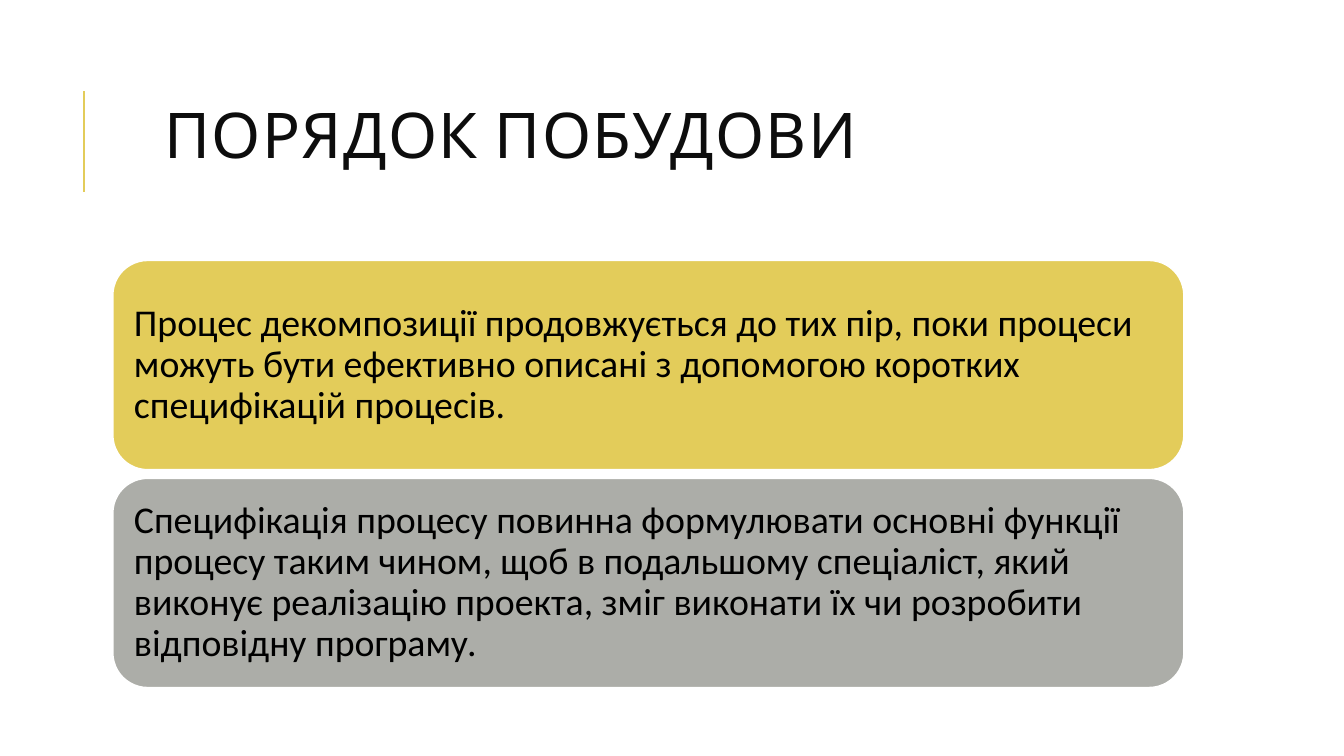
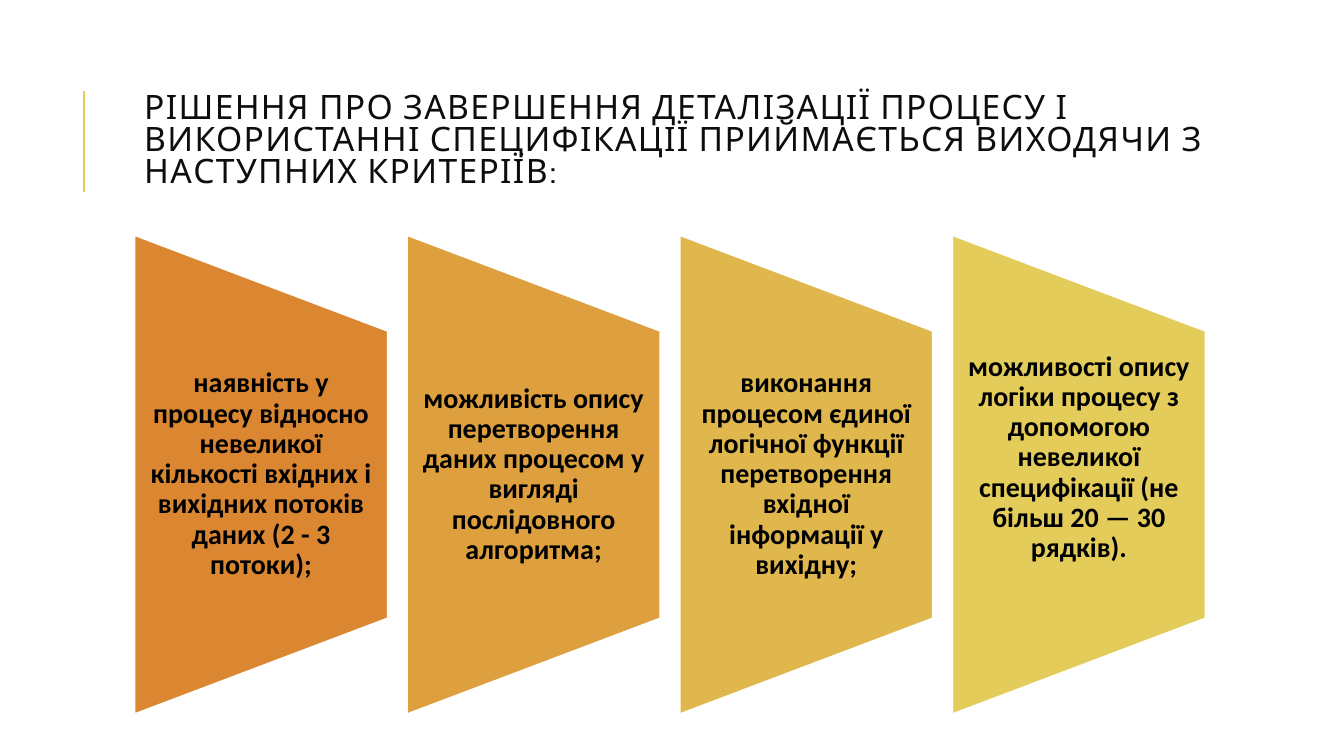
"""Build two slides on the order of process decomposition and its stopping criteria."""
from lxml.etree import SubElement
from pptx import Presentation
from pptx.dml.color import RGBColor
from pptx.enum.shapes import MSO_CONNECTOR, MSO_SHAPE
from pptx.enum.text import MSO_ANCHOR, MSO_AUTO_SIZE, PP_ALIGN
from pptx.oxml.ns import qn
from pptx.util import Cm, Pt

COLOURS = {
    "title": "0D0D0D", "text": "000000", "outline": "FFFFFF",
    "yellow": "E3CC5A", "grey": "ACADA8", "orange": "DB8631",
    "amber": "DEA03F", "gold": "E0B74C",
}
TITLE_FONT, BODY_FONT = "Cabin", "Calibri"

ORDER_TITLE = "ПОРЯДОК ПОБУДОВИ"
ORDER_STEPS = [
    ("yellow", "Процес декомпозиції продовжується до тих пір, поки процеси можуть бути "
               "ефективно описані з допомогою коротких специфікацій процесів."),
    ("grey", "Специфікація процесу повинна формулювати основні функції процесу таким чином, "
             "щоб в подальшому спеціаліст, який виконує реалізацію проекта, зміг виконати їх "
             "чи розробити відповідну програму."),
]

CRITERIA_TITLE = ("РІШЕННЯ ПРО ЗАВЕРШЕННЯ ДЕТАЛІЗАЦІЇ ПРОЦЕСУ І ВИКОРИСТАННІ СПЕЦИФІКАЦІЇ "
                  "ПРИЙМАЄТЬСЯ ВИХОДЯЧИ З НАСТУПНИХ КРИТЕРІЇВ:")
CRITERIA = [
    ("orange", 0, "наявність у процесу відносно невеликої кількості вхідних і вихідних "
                  "потоків даних (2 - 3 потоки);"),
    ("amber", 0, "можливість опису перетворення даних процесом у вигляді послідовного алгоритма;"),
    ("gold", 0, "виконання процесом єдиної логічної функції перетворення вхідної "
                "інформації у вихідну;"),
    ("yellow", 0.85, "можливості опису логіки процесу з допомогою невеликої специфікації "
                     "(не більш 20 — 30 рядків)."),
]


def colour(name):
    """Return the named palette colour."""
    return RGBColor.from_string(COLOURS[name])


def write_text(shape, text, font, size, colour_name, align, spacing, bold=False):
    """Put one formatted paragraph, vertically centred, in a shape."""
    frame = shape.text_frame
    frame.text = text
    frame.word_wrap = True
    frame.auto_size = MSO_AUTO_SIZE.NONE
    frame.vertical_anchor = MSO_ANCHOR.MIDDLE
    paragraph = frame.paragraphs[0]
    paragraph.alignment = align
    paragraph.line_spacing = spacing
    run = paragraph.runs[0]
    run.font.name = font
    run.font.size = Pt(size)
    run.font.bold = bold
    run.font.color.rgb = colour(colour_name)
    return run


def set_insets(frame, horizontal, top, bottom):
    """Set the text margins in centimetres."""
    frame.margin_left = frame.margin_right = Cm(horizontal)
    frame.margin_top, frame.margin_bottom = Cm(top), Cm(bottom)


def add_panel(slide, preset, left, top, width, height, fill):
    """Add a filled shape with the shared white outline."""
    shape = slide.shapes.add_shape(preset, Cm(left), Cm(top), Cm(width), Cm(height))
    shape.shadow.inherit = False
    shape.fill.solid()
    shape.fill.fore_color.rgb = colour(fill)
    shape.line.color.rgb = colour("outline")
    shape.line.width = Pt(1.25)
    return shape


def add_titled_slide(presentation, layout, title, size, left, top, width, height):
    """Add a slide and format its title placeholder."""
    slide = presentation.slides.add_slide(layout)
    shape = slide.shapes.title
    shape.left, shape.top, shape.width, shape.height = map(Cm, (left, top, width, height))
    run = write_text(shape, title, TITLE_FONT, size, "title", PP_ALIGN.LEFT, 0.8)
    run.font._element.set("spc", "100")
    return slide


def move_accent_to_layout(slide, layout):
    """Draw the vertical title accent and make it part of the layout."""
    accent = slide.shapes.add_connector(
        MSO_CONNECTOR.STRAIGHT, Cm(2.12), Cm(4.83), Cm(2.12), Cm(2.29))
    accent.line.color.rgb = colour("yellow")
    accent.line.width = Pt(1.5)
    SubElement(accent.element.spPr, qn("a:effectLst"))
    layout.shapes.element.append(accent.element)


def add_order_steps(slide):
    """Stack the steps as rounded panels."""
    left, top, width, height, gap = 2.84, 6.56, 27, 5.28, 0.21
    for index, (fill, text) in enumerate(ORDER_STEPS):
        panel = add_panel(slide, MSO_SHAPE.ROUNDED_RECTANGLE,
                          left, top + index * (height + gap), width, height, fill)
        set_insets(panel.text_frame, 0.28, 0.28, 0.28)
        write_text(panel, text, BODY_FONT, 27, "text", PP_ALIGN.LEFT, 0.9)


def add_criteria(slide):
    """Set the criteria side by side on turned trapezoids."""
    left, middle, width, height, gap = 3.39, 11.96, 6.38, 12.07, 0.49
    text_height = 7.24
    for index, (fill, bottom_inset, text) in enumerate(CRITERIA):
        column = left + index * (width + gap)
        panel = add_panel(slide, MSO_SHAPE.FLOWCHART_MANUAL_OPERATION,
                          column + (width - height) / 2, middle - width / 2,
                          height, width, fill)
        panel.rotation = 270
        label = slide.shapes.add_textbox(
            Cm(column), Cm(middle - text_height / 2), Cm(width), Cm(text_height))
        set_insets(label.text_frame, 0.36, 0, bottom_inset)
        write_text(label, text, BODY_FONT, 20, "text", PP_ALIGN.CENTER, 0.9, bold=True)


def main():
    """Create and save the presentation."""
    presentation = Presentation()
    presentation.slide_width, presentation.slide_height = Cm(33.87), Cm(19.05)
    layout = presentation.slide_layouts[5]
    order = add_titled_slide(presentation, layout, ORDER_TITLE, 45, 3.89, 2.69, 21.64, 1.68)
    move_accent_to_layout(order, layout)
    add_order_steps(order)
    criteria = add_titled_slide(
        presentation, layout, CRITERIA_TITLE, 24, 3.38, 2.26, 27.66, 2.64)
    add_criteria(criteria)
    presentation.save("out.pptx")


if __name__ == "__main__":
    main()
